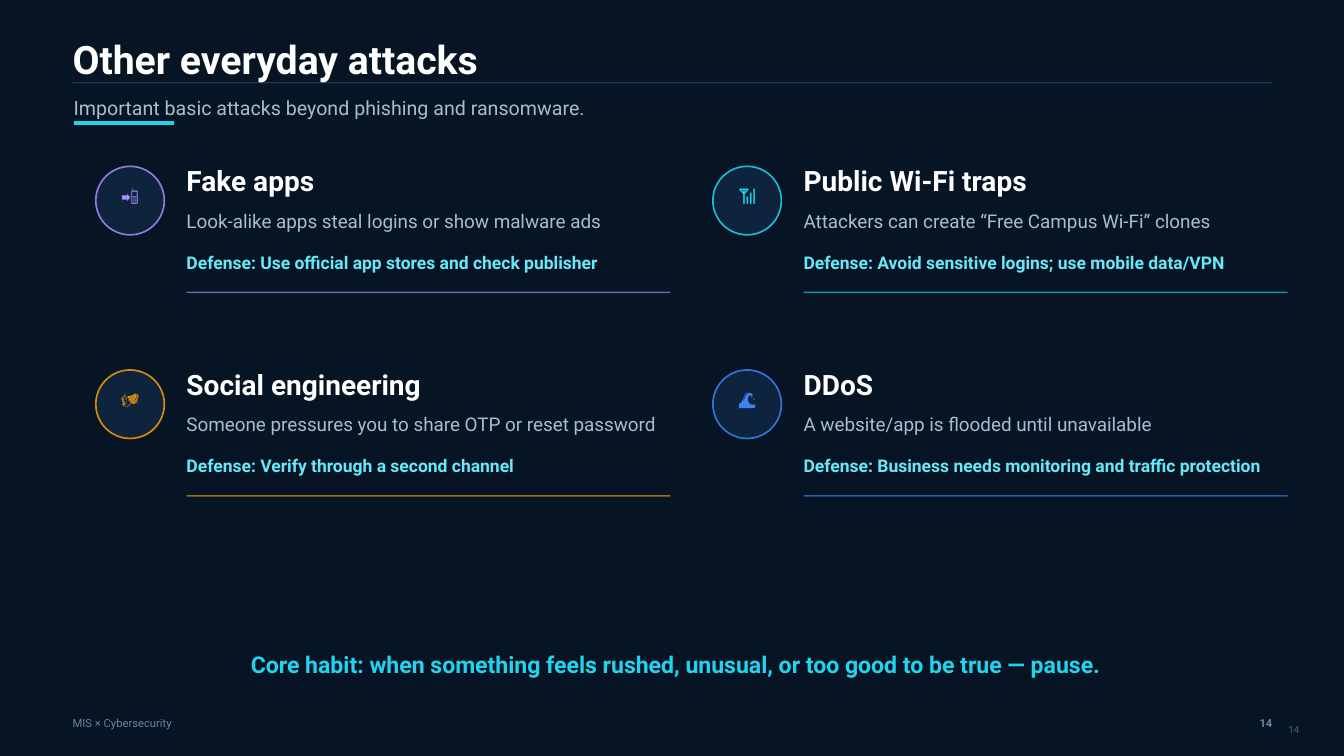
from lxml.etree import SubElement
from pptx import Presentation
from pptx.dml.color import RGBColor
from pptx.enum.shapes import MSO_CONNECTOR as Connector, MSO_SHAPE as Shape
from pptx.enum.text import MSO_ANCHOR as Anchor, PP_ALIGN as Align
from pptx.oxml.ns import qn
from pptx.util import Inches, Pt

NAVY = RGBColor(0x07, 0x14, 0x23)
DISC = RGBColor(0x0F, 0x26, 0x3F)
RULE = RGBColor(0x24, 0x49, 0x66)
WHITE = RGBColor(0xFF, 0xFF, 0xFF)
MUTED = RGBColor(0xA9, 0xBC, 0xD0)
FOOTER = RGBColor(0x6B, 0x84, 0xA0)
DIM = RGBColor(0x45, 0x61, 0x7B)
CYAN = RGBColor(0x22, 0xD3, 0xEE)
PALE_CYAN = RGBColor(0x67, 0xE8, 0xF9)
VIOLET = RGBColor(0xA7, 0x8B, 0xFA)
AMBER = RGBColor(0xF5, 0x9E, 0x0B)
BLUE = RGBColor(0x3B, 0x82, 0xF6)

ATTACKS = [
    ("📲", VIOLET, "Fake apps",
     "Look-alike apps steal logins or show malware ads",
     "Use official app stores and check publisher"),
    ("📶", CYAN, "Public Wi‑Fi traps",
     "Attackers can create “Free Campus Wi‑Fi” clones",
     "Avoid sensitive logins; use mobile data/VPN"),
    ("🎭", AMBER, "Social engineering",
     "Someone pressures you to share OTP or reset password",
     "Verify through a second channel"),
    ("🌊", BLUE, "DDoS",
     "A website/app is flooded until unavailable",
     "Business needs monitoring and traffic protection"),
]
GRID_LEFT, GRID_TOP = 0.95, 1.65
COLUMN_STEP, ROW_STEP = 6.12, 2.02
DISC_SIZE, TEXT_OFFSET, TEXT_WIDTH = 0.68, 0.9, 4.8


class SlideBuilder:
    font_name = "Roboto"

    def __init__(self, presentation):
        self.slide = presentation.slides.add_slide(presentation.slide_layouts[6])
        background = self.slide.background.fill
        background.solid()
        background.fore_color.rgb = NAVY

    def paint(self, fill, color, opacity):
        """Apply a solid color with an opacity in percent."""
        fill.solid()
        fill.fore_color.rgb = color
        if opacity < 100:
            element = fill._xPr.find(qn("a:solidFill"))[0]
            SubElement(element, qn("a:alpha"), val=str(opacity * 1000))

    def text(self, text, left, top, width, height, size, color, bold=False,
             align=Align.LEFT, anchor=Anchor.MIDDLE, inset=(0, 0)):
        box = self.slide.shapes.add_textbox(
            Inches(left), Inches(top), Inches(width), Inches(height))
        frame = box.text_frame
        across, down = (Inches(value) for value in inset)
        frame_format = {
            "word_wrap": True, "vertical_anchor": anchor,
            "margin_left": across, "margin_right": across,
            "margin_top": down, "margin_bottom": down,
        }
        for name, value in frame_format.items():
            setattr(frame, name, value)
        paragraph = frame.paragraphs[0]
        paragraph.alignment = align
        run = paragraph.add_run()
        run.text = text
        font_format = {"name": self.font_name, "size": Pt(size), "bold": bold}
        for name, value in font_format.items():
            setattr(run.font, name, value)
        run.font.color.rgb = color

    def rule(self, left, top, width, color, weight=1, opacity=100):
        """Draw a horizontal line."""
        line = self.slide.shapes.add_connector(
            Connector.STRAIGHT, Inches(left), Inches(top),
            Inches(left + width), Inches(top))
        line.line.width = Pt(weight)
        self.paint(line.line.fill, color, opacity)
        SubElement(line._element.spPr, qn("a:effectLst"))

    def disc(self, left, top, color):
        shape = self.slide.shapes.add_shape(
            Shape.OVAL, Inches(left), Inches(top),
            Inches(DISC_SIZE), Inches(DISC_SIZE))
        shape.shadow.inherit = False
        self.paint(shape.fill, DISC, 92)
        shape.line.width = Pt(1.2)
        self.paint(shape.line.fill, color, 85)

    def attack(self, left, top, icon, color, title, detail, defense):
        self.disc(left, top, color)
        self.text(icon, left, top + 0.1, DISC_SIZE, 0.37, 12.2, color,
                  align=Align.CENTER)
        text_left = left + TEXT_OFFSET
        self.text(title, text_left, top, 3, 0.28, 20, WHITE, bold=True)
        self.text(detail, text_left, top + 0.44, TEXT_WIDTH, 0.2, 13.5, MUTED)
        self.text(f"Defense: {defense}", text_left, top + 0.86, TEXT_WIDTH,
                  0.18, 12.5, PALE_CYAN, bold=True)
        self.rule(text_left, top + 1.25, TEXT_WIDTH, color, opacity=65)


def main():
    presentation = Presentation()
    presentation.slide_width = Inches(13.33)
    presentation.slide_height = Inches(7.5)
    builder = SlideBuilder(presentation)

    builder.rule(0.72, 0.82, 11.9, RULE, opacity=70)
    builder.text("Other everyday attacks", 0.72, 0.35, 11.2, 0.46, 28, WHITE,
                 bold=True)
    builder.text("Important basic attacks beyond phishing and ransomware.",
                 0.73, 0.93, 11.4, 0.28, 14, MUTED)
    builder.rule(0.73, 1.22, 1, CYAN, weight=3)

    for index, attack in enumerate(ATTACKS):
        row, column = divmod(index, 2)
        builder.attack(GRID_LEFT + column * COLUMN_STEP,
                       GRID_TOP + row * ROW_STEP, *attack)

    builder.text("Core habit: when something feels rushed, unusual, "
                 "or too good to be true — pause.",
                 1.25, 6.48, 10.9, 0.22, 16.5, CYAN, bold=True,
                 align=Align.CENTER)
    builder.text("MIS × Cybersecurity", 0.72, 7.08, 2.4, 0.18, 8, FOOTER)
    builder.text("14", 12.22, 7.08, 0.4, 0.18, 8, FOOTER, bold=True,
                 align=Align.RIGHT)
    builder.text("14", 12.68, 7.13, 0.87, 0.33, 7, DIM,
                 anchor=Anchor.TOP, inset=(0.1, 0.05))
    presentation.save("out.pptx")


if __name__ == "__main__":
    main()
